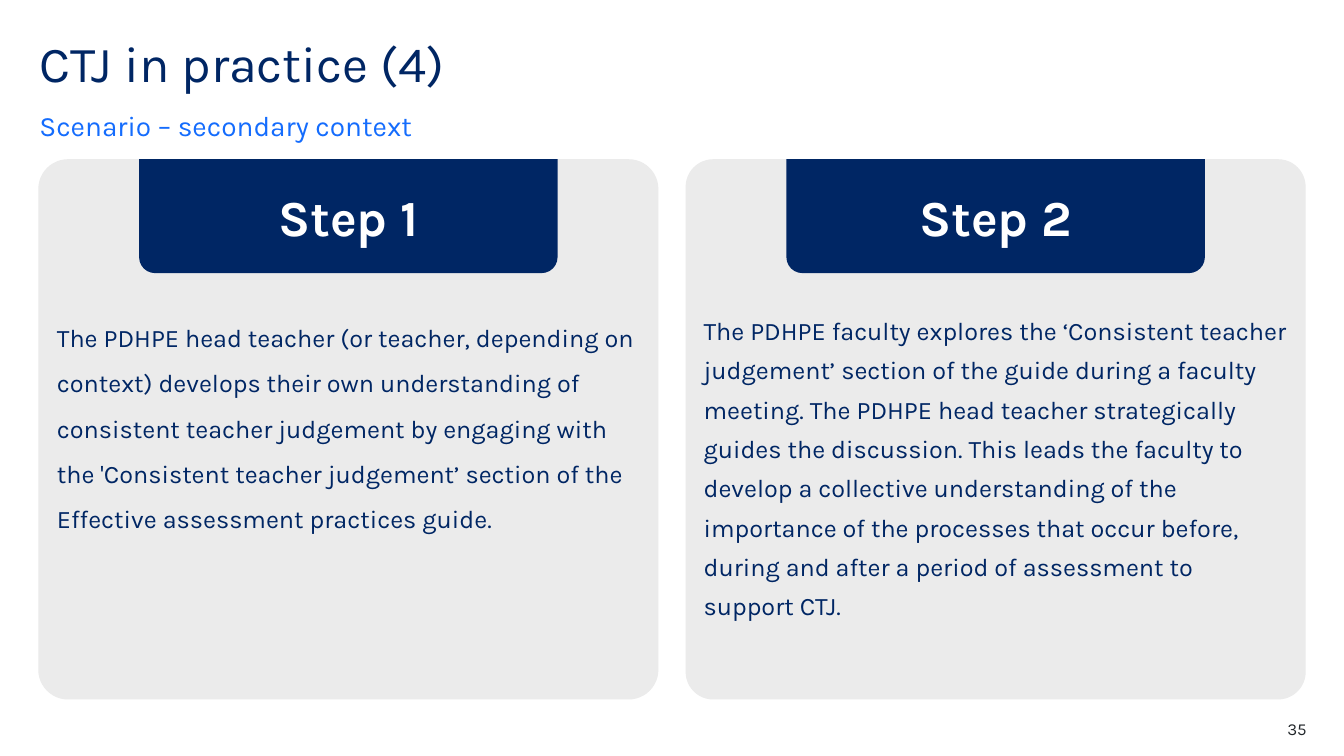
import pptx
import pptx.util
import pptx.dml.color
import pptx.enum.shapes
import pptx.enum.text
import pptx.oxml

Inches = pptx.util.Inches
Color = pptx.dml.color.RGBColor
Shape = pptx.enum.shapes.MSO_SHAPE
Align = pptx.enum.text.PP_ALIGN
Anchor = pptx.enum.text.MSO_ANCHOR

# Content
TITLE = "CTJ in practice (4)"
SUBTITLE = "Scenario – secondary context"
PAGE = "35"
STEPS = [
    dict(head="Step 1", round=0.055, line=1.5, after=12,
         body="The PDHPE head teacher (or teacher, depending on context) develops "
              "their own understanding of consistent teacher judgement by engaging "
              "with the 'Consistent teacher judgement’ section of the Effective "
              "assessment practices guide."),
    dict(head="Step 2", round=0.051, line=1.3, after=0,
         body="The PDHPE faculty explores the ‘Consistent teacher judgement’ section "
              "of the guide during a faculty meeting. The PDHPE head teacher "
              "strategically guides the discussion. This leads the faculty to develop "
              "a collective understanding of the importance of the processes that "
              "occur before, during and after a period of assessment to support CTJ."),
]

# Style
FONT = "Karla"
NAVY = Color(0x00, 0x26, 0x64)
BLUE = Color(0x14, 0x6C, 0xFD)
GREY = Color(0xEB, 0xEB, 0xEB)
DARK = Color(0x22, 0x27, 0x2B)
WHITE = Color(0xFF, 0xFF, 0xFF)

# Layout in inches
LEFT, TOP = 0.38, 1.58
CARD_W, CARD_H = 6.15, 5.36
PITCH = 6.42
TAB_W, TAB_H = 4.15, 1.13


def write(shape, text, size, color, bold=False, align=Align.LEFT,
          anchor=Anchor.TOP, line=1.0, after=0, inset=(0, 0, 0, 0)):
    frame = shape.text_frame
    frame.word_wrap = True
    frame.auto_size = pptx.enum.text.MSO_AUTO_SIZE.NONE
    frame.vertical_anchor = anchor
    (frame.margin_left, frame.margin_top,
     frame.margin_right, frame.margin_bottom) = map(Inches, inset)
    frame.text = text
    para = frame.paragraphs[0]
    para.alignment = align
    para.line_spacing = line
    para.space_before = pptx.util.Pt(0)
    para.space_after = pptx.util.Pt(after)
    font = para.runs[0].font
    font.name, font.size, font.bold = FONT, pptx.util.Pt(size), bold
    font.color.rgb = color


def place(shape, *box):
    shape.left, shape.top, shape.width, shape.height = map(Inches, box)


def block(kind, fill, *box):
    shape = slide.shapes.add_shape(kind, *map(Inches, box))
    shape.shadow.inherit = False
    shape.fill.solid()
    shape.fill.fore_color.rgb = fill
    shape.line.fill.background()
    return shape


deck = pptx.Presentation()
deck.slide_width, deck.slide_height = Inches(13.33), Inches(7.5)
slide = deck.slides.add_slide(deck.slide_layouts[1])

# Title and subtitle
title, body = slide.placeholders
place(title, 0.39, 0.39, 11.02, 0.6)
write(title, TITLE, 36, NAVY, line=0.9)
place(body, 0.39, 1.07, 11.02, 0.34)
write(body, SUBTITLE, 20, BLUE, anchor=Anchor.BOTTOM, line=1.5, after=12)
props = body.text_frame.paragraphs[0]._p.get_or_add_pPr()
props.set("marL", "0")
props.set("indent", "0")
props.append(pptx.oxml.parse_xml(
    '<a:buNone xmlns:a="http://schemas.openxmlformats.org/drawingml/2006/main"/>'))

# Step cards with hanging tabs
for i, step in enumerate(STEPS):
    x = LEFT + i * PITCH
    card = block(Shape.ROUNDED_RECTANGLE, GREY, x, TOP, CARD_W, CARD_H)
    card.adjustments[0] = step["round"]
    write(card, step["body"], 18, NAVY, line=step["line"], after=step["after"],
          inset=(0.1, 1.38, 0.1, 0.05))
    tab = block(Shape.ROUND_2_SAME_RECTANGLE, NAVY,
                x + (CARD_W - TAB_W) / 2, TOP, TAB_W, TAB_H)
    tab.adjustments[0], tab.adjustments[1] = 0, 0.14
    write(tab, step["head"], 36, WHITE, bold=True, align=Align.CENTER,
          anchor=Anchor.MIDDLE, inset=(0.1, 0.1, 0.1, 0.05))

# Page number
page = slide.shapes.add_textbox(*map(Inches, (12.17, 7.13, 0.79, 0.2)))
write(page, PAGE, 12, DARK, align=Align.RIGHT)

deck.save("out.pptx")
